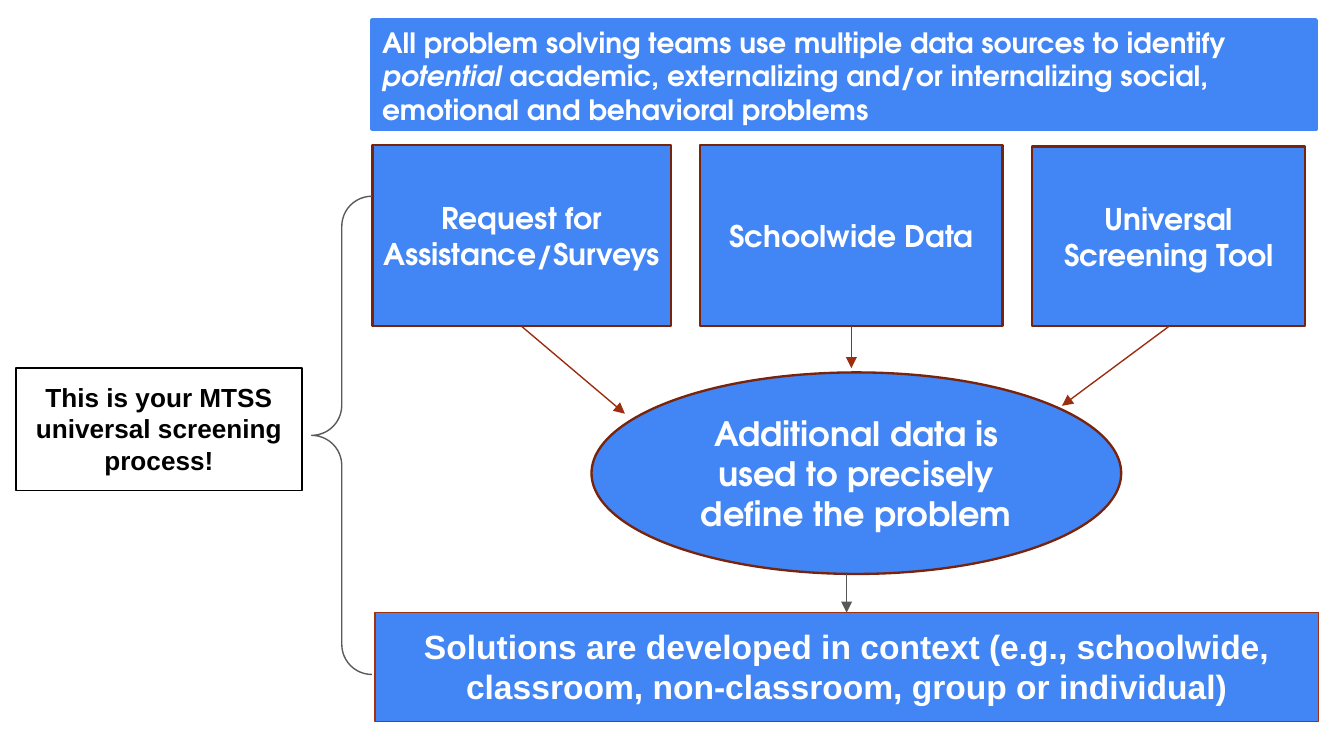
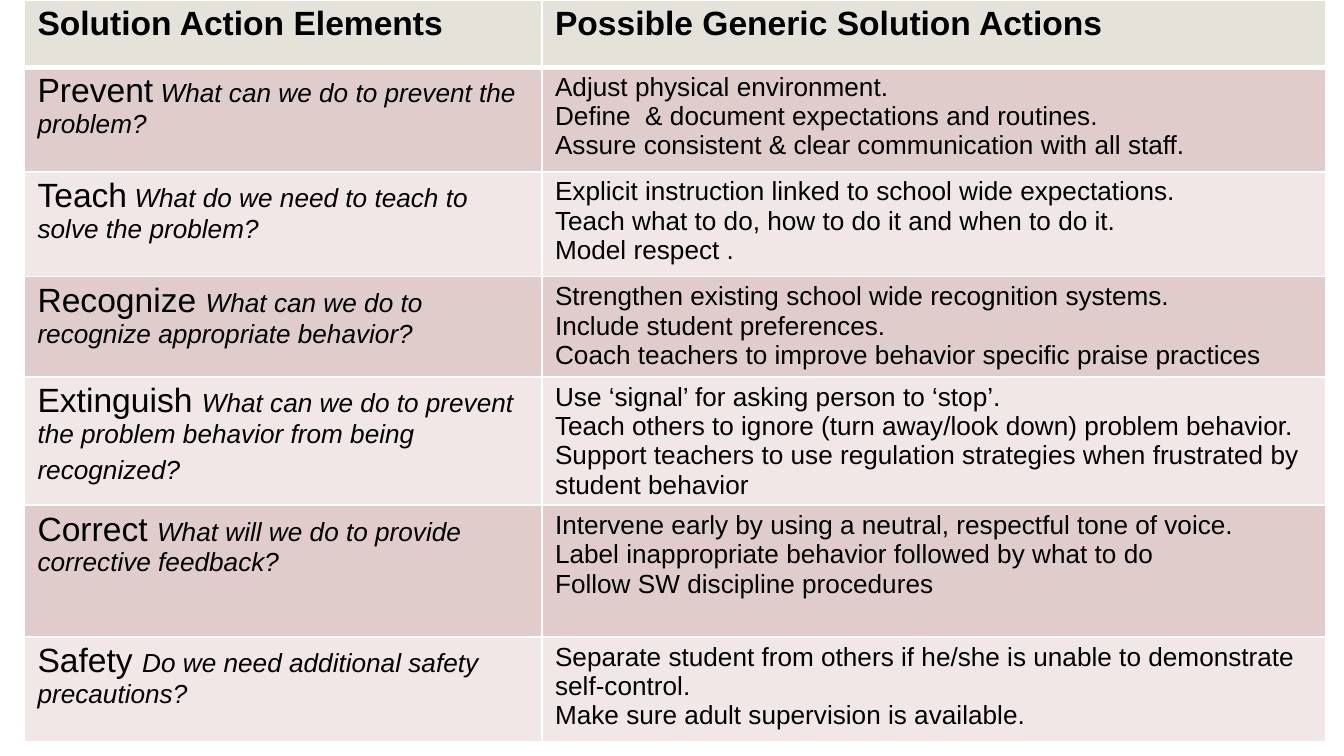
"""Build two slides on a school screening process and its solution actions."""

from dataclasses import dataclass
from typing import Optional

from lxml.etree import Element, SubElement
from pptx import Presentation
from pptx.dml.color import RGBColor
from pptx.enum.shapes import MSO_CONNECTOR, MSO_SHAPE
from pptx.enum.text import MSO_ANCHOR, MSO_AUTO_SIZE, PP_ALIGN
from pptx.oxml.ns import qn
from pptx.presentation import Presentation as Deck
from pptx.shapes.autoshape import Shape
from pptx.slide import Slide
from pptx.text.text import TextFrame
from pptx.util import Cm, Pt


@dataclass(frozen=True)
class Theme:
    """Colours, fonts and type sizes of the deck."""

    blue: str = "4285F4"
    brown: str = "78230B"
    rust: str = "9D2D0F"
    solution_edge: str = "A53010"
    gray: str = "595959"
    black: str = "000000"
    white: str = "FFFFFF"
    header_fill: str = "E5E3D9"
    row_fills: tuple[str, str] = ("E0CCCA", "F0E7E6")
    display_font: str = "TeX Gyre Adventor"
    body_font: str = "Arial"
    body_size: int = 14
    banner_size: int = 15
    box_size: int = 16
    large_size: int = 18


THEME = Theme()
TIGHT = (0.18, 0.1)
ROOMY = (0.25, 0.25)
CELL = (0.25, 0.1)


@dataclass(frozen=True)
class Span:
    """A stretch of text that may differ in size or slant."""

    text: str
    size: Optional[int] = None
    italic: bool = False


@dataclass(frozen=True)
class Box:
    """A labelled outline, measured in centimetres."""

    text: str
    left: float
    top: float
    width: float
    height: float
    kind: MSO_SHAPE = MSO_SHAPE.RECTANGLE
    fill: Optional[str] = THEME.blue
    edge: str = THEME.brown
    edge_width: float = 1.25
    size: int = THEME.box_size
    font: str = THEME.display_font
    color: str = THEME.white
    insets: tuple[float, float] = TIGHT
    anchor: MSO_ANCHOR = MSO_ANCHOR.MIDDLE
    grows: bool = False


@dataclass(frozen=True)
class SolutionAction:
    """One table row: an element, its question and possible actions."""

    element: str
    question: str
    actions: tuple[str, ...]
    height: float
    ending: str = ""


BANNER = (
    Span("All problem solving teams use multiple data sources to identify "),
    Span("potential ", italic=True),
    Span("academic, externalizing and/or internalizing social, emotional and behavioral problems"),
)
DATA_SOURCES = (
    (Box("Request for Assistance/Surveys", 7.04, 2.74, 5.64, 3.43), (11.81, 7.82)),
    (Box("Schoolwide Data", 13.23, 2.74, 5.72, 3.43), (16.09, 6.96)),
    (Box("Universal Screening Tool", 19.51, 2.77, 5.16, 3.4), (20.07, 7.67)),
)
DEFINITION = Box(
    "Additional data is used to precisely define the problem",
    11.18, 7.04, 10.01, 3.81, kind=MSO_SHAPE.OVAL, size=THEME.large_size,
)
SOLUTIONS = Box(
    "Solutions are developed in context (e.g., schoolwide, classroom, non-classroom, group or individual)",
    7.09, 11.58, 17.83, 2.06, edge=THEME.solution_edge, edge_width=0.75, size=THEME.large_size,
    font=THEME.body_font, insets=ROOMY, anchor=MSO_ANCHOR.TOP, grows=True,
)
PROCESS_NOTE = Box(
    "This is your MTSS universal screening process!",
    0.3, 6.96, 5.41, 2.31, fill=None, edge=THEME.black, edge_width=0.75, size=THEME.body_size,
    font=THEME.body_font, color=THEME.black, insets=ROOMY, anchor=MSO_ANCHOR.TOP, grows=True,
)
BRACE = Box(
    "", 5.89, 3.71, 1.14, 9.04, kind=MSO_SHAPE.LEFT_BRACE, fill=None, edge=THEME.gray, edge_width=0.75,
)

HEADERS = ("Solution Action Elements", "Possible Generic Solution Actions")
HEADER_HEIGHT = 1.27
COLUMN_WIDTHS = (9.78, 14.81)
SOLUTION_ACTIONS = (
    SolutionAction("Prevent", "What can we do to prevent the problem?", (
        "Adjust physical environment.",
        "Define  & document expectations and routines.",
        "Assure consistent & clear communication with all staff.",
    ), 1.98),
    SolutionAction("Teach", "What do we need to teach to solve the problem?", (
        "Explicit instruction linked to school wide expectations.",
        "Teach what to do, how to do it and when to do it.",
        "Model respect .",
    ), 1.98),
    SolutionAction("Recognize ", "What can we do to recognize appropriate behavior?", (
        "Strengthen existing school wide recognition systems.",
        "Include student preferences.",
        "Coach teachers to improve behavior specific praise practices",
    ), 1.9),
    SolutionAction("Extinguish ", "What can we do to prevent the problem behavior from being recognized?", (
        "Use ‘signal’ for asking person to ‘stop’.",
        "Teach others to ignore (turn away/look down) problem behavior.",
        "Support teachers to use regulation strategies when frustrated by student behavior",
    ), 2.24, ending=" "),
    SolutionAction("Correct ", "What will we do to provide corrective feedback?", (
        "Intervene early by using a neutral, respectful tone of voice.",
        "Label inappropriate behavior followed by what to do",
        "Follow SW discipline procedures",
    ), 2.49),
    SolutionAction("Safety ", "Do we need additional safety precautions?", (
        "Separate student from others if he/she is unable to demonstrate self-control.",
        "Make sure adult supervision is available.",
    ), 1.98),
)


def rgb(color: str) -> RGBColor:
    """Turn a hex string into a colour."""
    return RGBColor.from_string(color)


def write_text(
    frame: TextFrame,
    *paragraphs: tuple[Span, ...],
    size: int = THEME.body_size,
    font: str = THEME.body_font,
    color: str = THEME.black,
    bold: bool = False,
    align: PP_ALIGN = PP_ALIGN.LEFT,
) -> None:
    """Fill a text frame with formatted paragraphs."""
    for index, spans in enumerate(paragraphs):
        paragraph = frame.add_paragraph() if index else frame.paragraphs[0]
        paragraph.alignment = align
        for span in spans:
            run = paragraph.add_run()
            run.text = span.text
            run.font.name = font
            run.font.size = Pt(span.size or size)
            run.font.bold = bold
            run.font.italic = span.italic
            run.font.color.rgb = rgb(color)


def set_frame(frame: TextFrame, insets: tuple[float, float], anchor: MSO_ANCHOR, grows: bool = False) -> None:
    """Set wrapping, insets, anchor and fitting of a text frame."""
    frame.word_wrap = True
    frame.auto_size = MSO_AUTO_SIZE.SHAPE_TO_FIT_TEXT if grows else MSO_AUTO_SIZE.NONE
    frame.vertical_anchor = anchor
    frame.margin_left = frame.margin_right = Cm(insets[0])
    frame.margin_top = frame.margin_bottom = Cm(insets[1])


def paint(shape: Shape, fill: Optional[str], edge: str, edge_width: float) -> None:
    """Set the fill and outline of a shape."""
    if fill:
        shape.fill.solid()
        shape.fill.fore_color.rgb = rgb(fill)
    else:
        shape.fill.background()
    shape.line.color.rgb = rgb(edge)
    shape.line.width = Pt(edge_width)


def add_box(slide: Slide, box: Box) -> Shape:
    """Draw a box with its text."""
    shape = slide.shapes.add_shape(box.kind, Cm(box.left), Cm(box.top), Cm(box.width), Cm(box.height))
    shape.shadow.inherit = False
    paint(shape, box.fill, box.edge, box.edge_width)
    if box.text:
        set_frame(shape.text_frame, box.insets, box.anchor, box.grows)
        write_text(
            shape.text_frame, (Span(box.text),), size=box.size, font=box.font,
            color=box.color, bold=True, align=PP_ALIGN.CENTER,
        )
    return shape


def add_arrow(
    slide: Slide,
    start: tuple[float, float],
    end: tuple[float, float],
    color: str,
    source: Optional[Shape] = None,
) -> None:
    """Draw a straight arrow, glued to the bottom of its source if given."""
    arrow = slide.shapes.add_connector(MSO_CONNECTOR.STRAIGHT, *(Cm(value) for value in start + end))
    if source is not None:
        arrow.begin_connect(source, 2)
    arrow.line.color.rgb = rgb(color)
    arrow.line.width = Pt(0.75)
    properties = arrow.element.spPr
    SubElement(properties.find(qn("a:ln")), qn("a:tailEnd"), type="triangle")
    SubElement(properties, qn("a:effectLst"))


def add_banner_title(slide: Slide) -> None:
    """Turn the title placeholder into the blue banner."""
    title = slide.shapes.title
    title.left, title.top, title.width, title.height = Cm(7.04), Cm(0.38), Cm(17.83), Cm(2.06)
    paint(title, THEME.blue, THEME.blue, 2.25)
    set_frame(title.text_frame, TIGHT, MSO_ANCHOR.TOP)
    write_text(
        title.text_frame, BANNER, size=THEME.banner_size, font=THEME.display_font, color=THEME.white, bold=True,
    )


def build_screening_slide(presentation: Deck) -> None:
    """Show how data sources lead to solutions."""
    slide = presentation.slides.add_slide(presentation.slide_layouts.get_by_name("Title Only"))
    add_banner_title(slide)
    sources = [add_box(slide, box) for box, _ in DATA_SOURCES]
    add_box(slide, DEFINITION)
    for source, (box, target) in zip(sources, DATA_SOURCES):
        add_arrow(slide, (box.left + box.width / 2, box.top + box.height), target, THEME.rust, source)
    add_box(slide, SOLUTIONS)
    add_arrow(slide, (16, DEFINITION.top + DEFINITION.height), (16, SOLUTIONS.top), THEME.gray)
    add_box(slide, PROCESS_NOTE)
    brace = add_box(slide, BRACE)
    brace.adjustments[0] = brace.adjustments[1] = 0.5


def add_borders(cell_properties: Element, widths: dict[str, float]) -> None:
    """Give a table cell white borders of the given widths."""
    for index, (side, width) in enumerate(widths.items()):
        line = Element(qn(f"a:ln{side}"), w=str(Pt(width)))
        SubElement(SubElement(line, qn("a:solidFill")), qn("a:srgbClr"), val=THEME.white)
        cell_properties.insert(index, line)


def build_actions_slide(presentation: Deck) -> None:
    """Tabulate solution elements with their possible actions."""
    slide = presentation.slides.add_slide(presentation.slide_layouts.get_by_name("Blank"))
    heights = [HEADER_HEIGHT, *(action.height for action in SOLUTION_ACTIONS)]
    frame = slide.shapes.add_table(
        len(heights), len(HEADERS), Cm(0.46), Cm(0), Cm(sum(COLUMN_WIDTHS)), Cm(sum(heights)),
    )
    table = frame.table
    table.first_row = table.horz_banding = False
    for column, width in zip(table.columns, COLUMN_WIDTHS):
        column.width = Cm(width)
    contents = [tuple([(Span(header, THEME.large_size),)] for header in HEADERS)]
    for action in SOLUTION_ACTIONS:
        gap = "" if action.element.endswith(" ") else " "
        spans = (
            Span(action.element, THEME.large_size), Span(gap),
            Span(action.question, italic=True), Span(action.ending, THEME.large_size),
        )
        contents.append(([tuple(span for span in spans if span.text)], [(Span(text),) for text in action.actions]))
    for index, (row, height, texts) in enumerate(zip(table.rows, heights, contents)):
        row.height = Cm(height)
        for cell, paragraphs in zip(row.cells, texts):
            cell.margin_left = cell.margin_right = Cm(CELL[0])
            cell.margin_top = cell.margin_bottom = Cm(CELL[1])
            cell.fill.solid()
            cell.fill.fore_color.rgb = rgb(THEME.row_fills[(index - 1) % 2] if index else THEME.header_fill)
            write_text(cell.text_frame, *paragraphs, bold=index == 0)
    for index, cell_properties in enumerate(frame.element.iter(qn("a:tcPr"))):
        row_index = index // len(HEADERS)
        add_borders(cell_properties, {"L": 1, "R": 1, "T": 3 if row_index == 1 else 1, "B": 1 if row_index else 3})


def main() -> None:
    """Build and save the deck."""
    presentation = Presentation()
    presentation.slide_width, presentation.slide_height = Cm(25.4), Cm(14.29)
    build_screening_slide(presentation)
    build_actions_slide(presentation)
    presentation.save("out.pptx")


if __name__ == "__main__":
    main()
